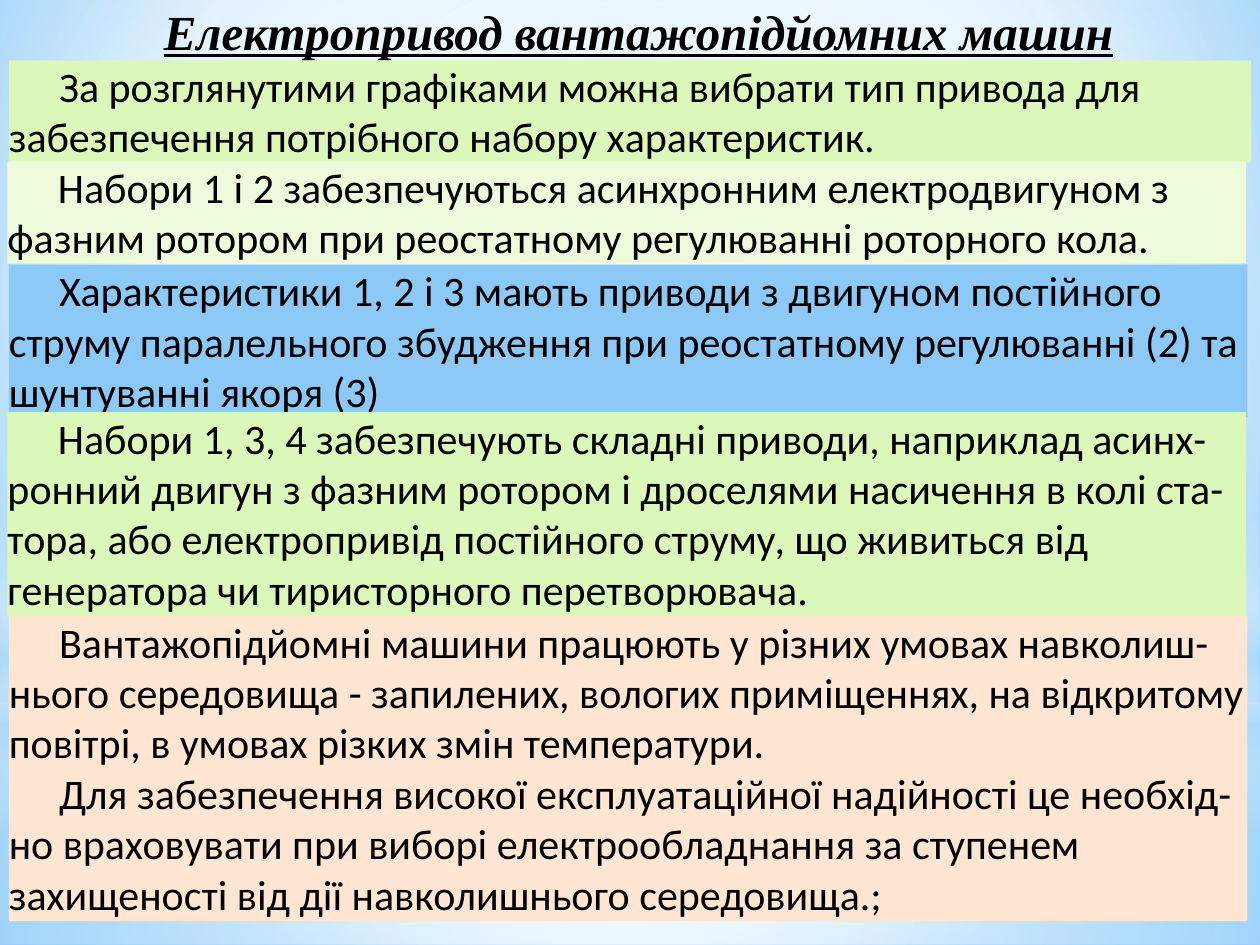
from dataclasses import dataclass
from lxml.etree import SubElement as Sub
from pptx import Presentation
from pptx.dml.color import RGBColor as Rgb
from pptx.enum.shapes import MSO_SHAPE as Shape
from pptx.enum.text import MSO_ANCHOR as Anchor, MSO_AUTO_SIZE as Fit, PP_ALIGN as Align
from pptx.oxml import parse_xml
from pptx.oxml.ns import nsdecls, qn
from pptx.util import Inches, Pt


@dataclass(frozen=True)
class Theme:
    ink: str = "000000"
    white: str = "FFFFFF"
    sky: str = "B4DCFA"
    lime: str = "DCF7BA"
    mint: str = "EDFBDC"
    blue: str = "8CC9F7"
    peach: str = "FFE6D3"
    head: int = 28
    body: int = 24


T = Theme()
MID = (50, 50, 50, 50)

# Backdrop layers: box, shape, stops (position, colour, opacity), focus or None
GLOWS = [
    ((0, 5.58, 10, 1.92), Shape.RECTANGLE,
     [(0, T.white, 91), (37, T.white, 76), (100, T.sky, 79)], MID),
    ((0, 0, 10, 5.58), Shape.RECTANGLE,
     [(0, T.white, 89), (48, T.white, 62), (100, T.sky, 79)], MID),
    ((0, 4.12, 10, 2.5), Shape.RECTANGLE,
     [(0, T.white, 0), (29, T.white, 30), (45, T.sky, 40),
      (55, T.white, 26), (65, T.sky, 60), (100, T.white, 0)], None),
    ((0, 1.75, 10, 5.58), Shape.OVAL,
     [(0, T.white, 100), (56, T.white, 0)], MID),
]

# Text bands: box, colour, paragraphs
BANDS = [
    ((0.07, 0.48, 9.86, 0.81), T.lime, [
        "За розглянутими графіками можна вибрати тип привода для "
        "забезпечення потрібного набору характеристик."]),
    ((0.06, 1.28, 9.83, 0.81), T.mint, [
        "Набори 1 і 2 забезпечуються асинхронним електродвигуном з "
        "фазним ротором при реостатному регулюванні роторного кола."]),
    ((0.07, 2.1, 9.83, 1.21), T.blue, [
        "Характеристики 1, 2 і 3 мають приводи з двигуном постійного "
        "струму паралельного збудження при реостатному регулюванні (2) та "
        "шунтуванні якоря (3)"]),
    ((0.06, 3.27, 9.83, 1.62), T.lime, [
        "Набори 1, 3, 4 забезпечують складні приводи, наприклад асинх-"
        "ронний двигун з фазним ротором і дроселями насичення в колі ста-"
        "тора, або електропривід постійного струму, що живиться від "
        "генератора чи тиристорного перетворювача."]),
    ((0.07, 4.89, 9.83, 2.42), T.peach, [
        "Вантажопідйомні машини працюють у різних умовах навколиш-"
        "нього середовища - запилених, вологих приміщеннях, на відкритому "
        "повітрі, в умовах різких змін температури.",
        "Для забезпечення високої експлуатаційної надійності це необхід-"
        "но враховувати при виборі електрообладнання за ступенем "
        "захищеності від дії навколишнього середовища.;"]),
]


def apply(item, style):
    for name, value in style.items():
        setattr(item, name, value)


def blend(root, fill, stops, focus):
    """Fill with a gradient: circular around focus, or top-down without one."""
    fill.solid()
    old = root.find(".//" + qn("a:solidFill"))
    grad = parse_xml(f'<a:gradFill {nsdecls("a")} rotWithShape="1"><a:gsLst/></a:gradFill>')
    for pos, color, alpha in stops:
        stop = Sub(grad[0], qn("a:gs"), pos=str(pos * 1000))
        tint = Sub(stop, qn("a:srgbClr"), val=color)
        Sub(tint, qn("a:alpha"), val=str(alpha * 1000))
    if focus:
        ring = Sub(grad, qn("a:path"), path="circle")
        Sub(ring, qn("a:fillToRect"), {k: str(v * 1000) for k, v in zip("ltrb", focus)})
    else:
        Sub(grad, qn("a:lin"), ang="5400000", scaled="0")
    old.getparent().replace(old, grad)


def add_form(slide, kind, box):
    form = slide.shapes.add_shape(kind, *map(Inches, box))
    form.shadow.inherit = False
    form.line.fill.background()
    return form


def write(frame, texts, font, wrap=True, indent=0):
    apply(frame, dict(margin_left=0, margin_top=0, margin_right=0, margin_bottom=0,
                      word_wrap=wrap, auto_size=Fit.SHAPE_TO_FIT_TEXT,
                      vertical_anchor=Anchor.TOP))
    for i, text in enumerate(texts):
        para = frame.add_paragraph() if i else frame.paragraphs[0]
        para.alignment = Align.LEFT
        props = para._p.get_or_add_pPr()
        props.set("marL", "0")
        props.set("indent", str(Inches(indent)))
        run = para.add_run()
        run.text = text
        apply(run.font, font)
        run.font.color.rgb = Rgb.from_string(T.ink)


def add_glow(slide, box, kind, stops, focus):
    form = add_form(slide, kind, box)
    blend(form._element, form.fill, stops, focus)


def add_band(slide, box, color, texts):
    band = add_form(slide, Shape.RECTANGLE, box)
    band.fill.solid()
    band.fill.fore_color.rgb = Rgb.from_string(color)
    write(band.text_frame, texts, dict(name="Calibri", size=Pt(T.body)), indent=0.4)


def set_title(slide, box, text):
    title = slide.shapes.title
    apply(title, dict(zip(("left", "top", "width", "height"), map(Inches, box))))
    write(title.text_frame, [text], dict(name="Times New Roman", size=Pt(T.head),
                                         bold=True, italic=True, underline=True), wrap=False)
    # Lift the title above the backdrop
    slide.shapes._spTree.append(title._element)


def main():
    deck = Presentation()
    apply(deck, dict(slide_width=Inches(10), slide_height=Inches(7.5)))
    slide = deck.slides.add_slide(deck.slide_layouts[5])

    # Backdrop
    blend(slide._element, slide.background.fill,
          [(0, "9ED5FF", 100), (60, T.white, 100), (100, "5BB9FF", 100)], (20, 10, 20, 60))
    for glow in GLOWS:
        add_glow(slide, *glow)

    # Title and text
    set_title(slide, (1.3, 0.01, 7.62, 0.47), "Електропривод вантажопідйомних машин")
    for band in BANDS:
        add_band(slide, *band)
    deck.save("out.pptx")


if __name__ == "__main__":
    main()
